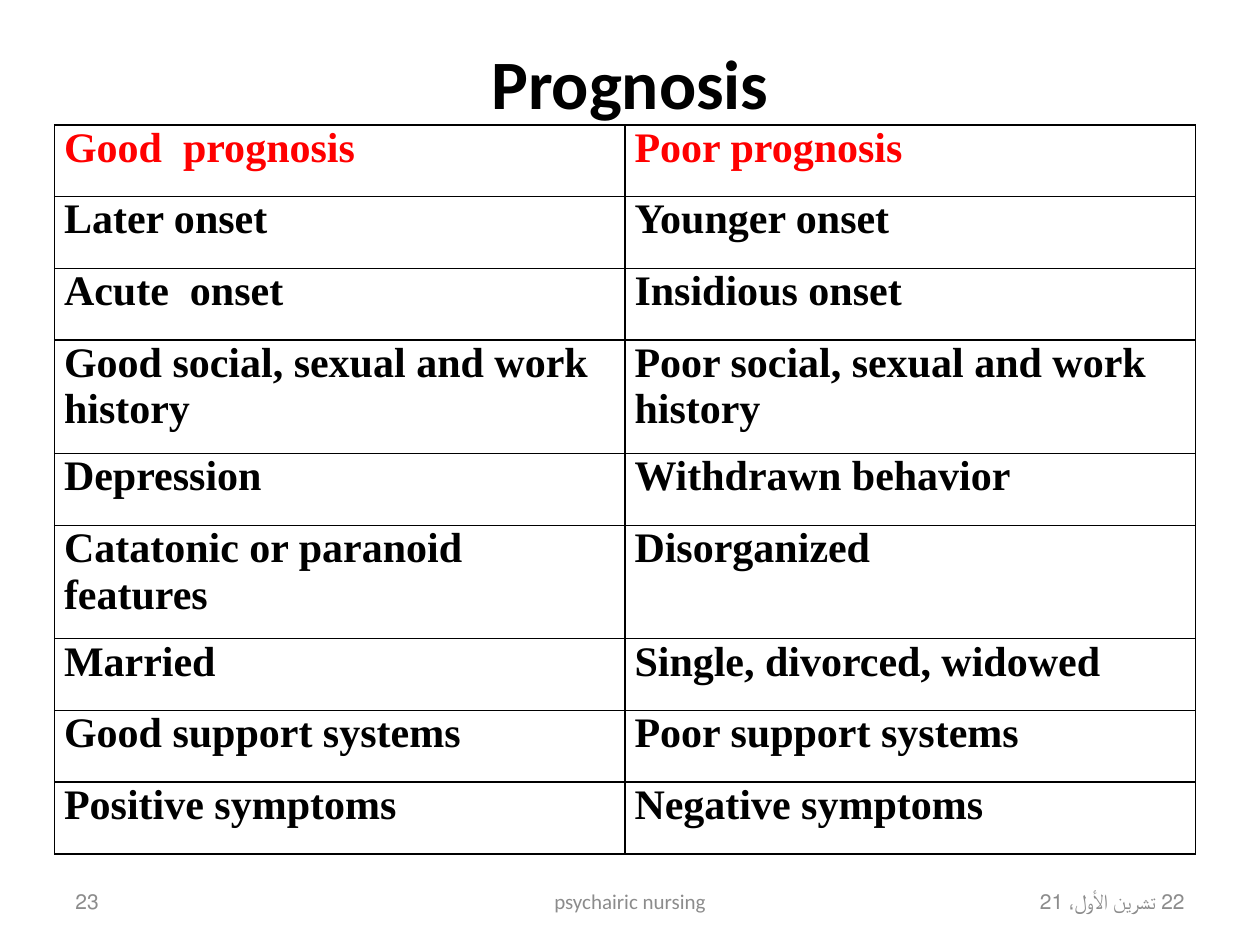
import pptx
import pptx.dml.color
import pptx.enum.text
import pptx.oxml
import pptx.oxml.ns
import pptx.util
from lxml import etree

Pt = pptx.util.Pt
RGBColor = pptx.dml.color.RGBColor
Align = pptx.enum.text.PP_ALIGN
Anchor = pptx.enum.text.MSO_ANCHOR

BLACK = RGBColor(0x00, 0x00, 0x00)
RED = RGBColor(0xFF, 0x00, 0x00)
GREY = RGBColor(0x8C, 0x8C, 0x8C)

TITLE = {"name": "Calibri", "size": Pt(39.6), "bold": True, "color": BLACK}
HEADING = {"name": "Times New Roman", "size": Pt(24), "bold": True, "color": RED}
BODY = {**HEADING, "color": BLACK}
FOOTER = {"name": "Calibri", "size": Pt(12), "bold": False, "color": GREY}

PROGNOSIS = [
    ("Good  prognosis", "Poor prognosis"),
    ("Later onset", "Younger onset"),
    ("Acute  onset", "Insidious onset"),
    ("Good social, sexual and work history", "Poor social, sexual and work history"),
    ("Depression", "Withdrawn behavior"),
    ("Catatonic or paranoid features", "Disorganized"),
    ("Married", "Single, divorced, widowed"),
    ("Good support systems", "Poor support systems"),
    ("Positive symptoms", "Negative symptoms"),
]
SINGLE_ROW, DOUBLE_ROW = 41.04, 64.8
DOUBLE_ROWS = (3, 5)


class SlideBuilder:
    def __init__(self, slide):
        self.slide = slide

    def style(self, run, look):
        for key, value in look.items():
            if key == "color":
                run.font.color.rgb = value
            else:
                setattr(run.font, key, value)

    def text(self, words, left, top, width, height, look, align):
        box = self.slide.shapes.add_textbox(Pt(left), Pt(top), Pt(width), Pt(height))
        frame = box.text_frame
        frame.word_wrap = True
        frame.vertical_anchor = Anchor.MIDDLE
        line = frame.paragraphs[0]
        line.alignment = align
        line._p.get_or_add_pPr().set("rtl", "1")
        run = line.add_run()
        run.text = words
        self.style(run, look)

    def border(self, cell):
        properties = cell._tc.get_or_add_tcPr()
        for position, side in enumerate(("lnL", "lnR", "lnT", "lnB")):
            edge = etree.Element(pptx.oxml.ns.qn("a:" + side), w=str(Pt(1)))
            fill = etree.SubElement(edge, pptx.oxml.ns.qn("a:solidFill"))
            etree.SubElement(fill, pptx.oxml.ns.qn("a:srgbClr"), val=str(BLACK))
            properties.insert(position, edge)

    def table(self, rows, left, top, column_width, row_heights):
        columns = len(rows[0])
        grid = self.slide.shapes.add_table(
            len(rows), columns, Pt(left), Pt(top),
            Pt(column_width * columns), Pt(sum(row_heights))).table
        for column in grid.columns:
            column.width = Pt(column_width)
        for r, row in enumerate(rows):
            grid.rows[r].height = Pt(row_heights[r])
            for c, words in enumerate(row):
                cell = grid.cell(r, c)
                # The wider right margin keeps the long entries on two lines
                cell.margin_left, cell.margin_right = Pt(5.4), Pt(7)
                cell.margin_top = cell.margin_bottom = 0
                cell.fill.background()
                self.border(cell)
                run = cell.text_frame.paragraphs[0].add_run()
                run.text = words
                self.style(run, BODY if r else HEADING)


def main():
    deck = pptx.Presentation()
    deck.slide_width, deck.slide_height = Pt(720), Pt(540)
    builder = SlideBuilder(deck.slides.add_slide(deck.slide_layouts[6]))

    # Title
    builder.text("Prognosis", 36, 21.6, 648, 49.7, TITLE, Align.CENTER)

    # Comparison of good and poor prognosis
    heights = [DOUBLE_ROW if r in DOUBLE_ROWS else SINGLE_ROW
               for r in range(len(PROGNOSIS))]
    builder.table(PROGNOSIS, 31.2, 71.3, 326, heights)

    # Footer: date, page number, course
    for words, left, width, align in (
            ("22 تشرين الأول، 21", 516, 168, Align.RIGHT),
            ("23", 36, 168, Align.LEFT),
            ("psychairic nursing", 246, 228, Align.CENTER)):
        builder.text(words, left, 500.5, width, 28.8, FOOTER, align)

    deck.save("out.pptx")


if __name__ == "__main__":
    main()
